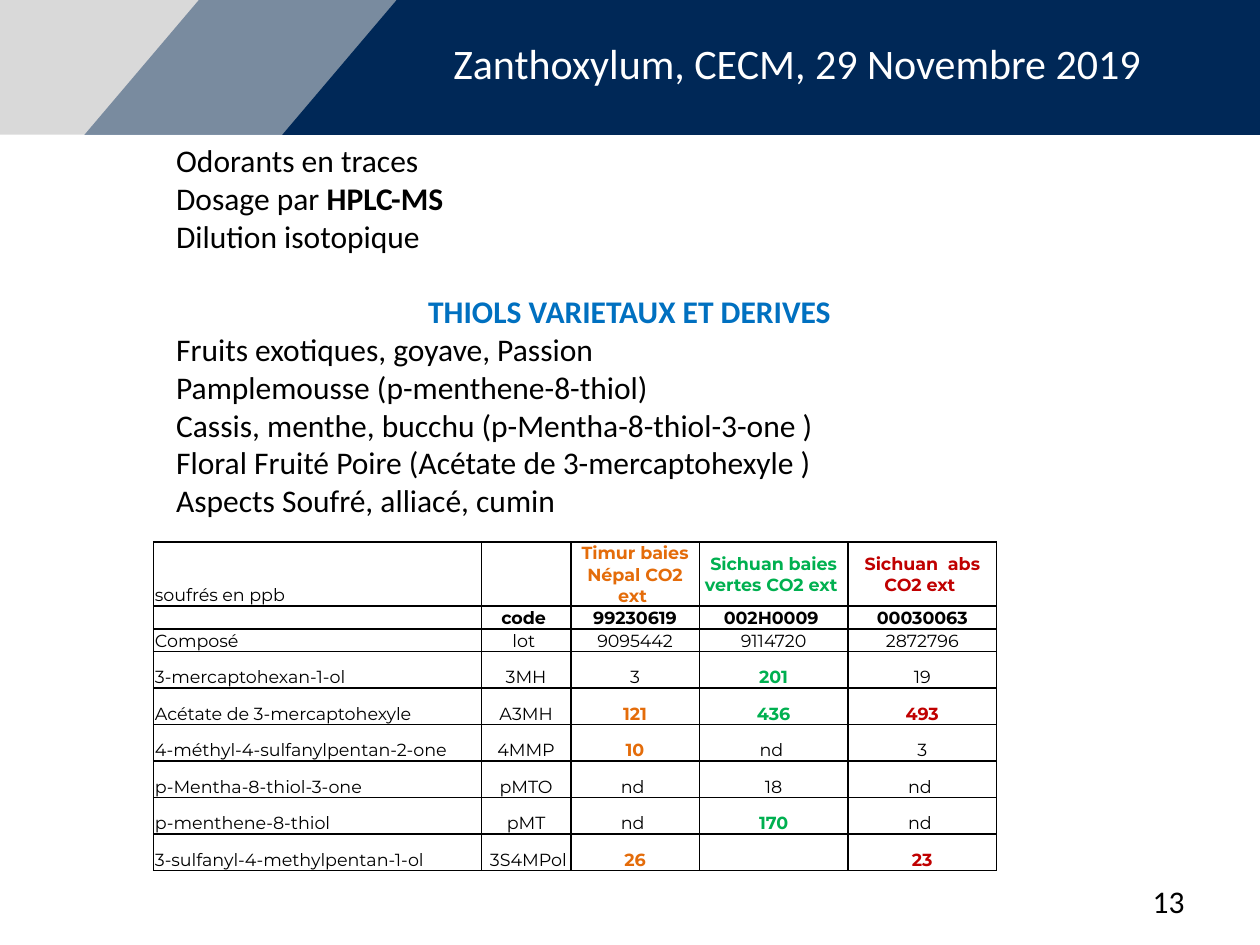
from lxml import etree
from pptx import Presentation
from pptx.dml.color import RGBColor
from pptx.enum import shapes, text
from pptx.oxml import ns
from pptx.util import Inches, Pt

NAVY, GREY, WHITE, BLACK, BLUE = "002857", "D9D9D9", "FFFFFF", "000000", "0070C0"
ORANGE, GREEN, RED = "E46C0A", "00B050", "C00000"
EXTRACT_COLOURS = {2: ORANGE, 3: GREEN, 4: RED}

# Each paragraph is a list of (text, bold) runs
METHOD = [
    [("Odorants en traces", False)],
    [("Dosage par ", False), ("HPLC-MS", True)],
    [("Dilution isotopique", False)],
]
HEADING = "THIOLS VARIETAUX ET DERIVES"
NOTES = [
    "Fruits exotiques, goyave, Passion",
    "Pamplemousse (p-menthene-8-thiol)",
    "Cassis, menthe, bucchu (p-Mentha-8-thiol-3-one )",
    "Floral Fruité Poire (Acétate de 3-mercaptohexyle )",
    "Aspects Soufré, alliacé, cumin",
]

DOSAGES = [
    ["soufrés en ppb", "", "Timur baies Népal CO2 ext ",
     "Sichuan baies vertes CO2 ext ", "Sichuan  abs CO2 ext "],
    ["", "code ", "99230619", "002H0009 ", "00030063"],
    ["Composé", "lot ", "9095442", "9114720", "2872796"],
    ["3-mercaptohexan-1-ol", "3MH", "3", "201", "19"],
    ["Acétate de 3-mercaptohexyle", "A3MH", "121", "436", "493"],
    ["4-méthyl-4-sulfanylpentan-2-one", "4MMP", "10", "nd ", "3"],
    ["p-Mentha-8-thiol-3-one", "pMTO", "nd ", "18", "nd "],
    ["p-menthene-8-thiol", "pMT", "nd ", " 170 ", "nd "],
    ["3-sulfanyl-4-methylpentan-1-ol", " 3S4MPol", "26", "", "23"],
]
COLUMN_WIDTHS = [2.6, 0.71, 1.02, 1.18, 1.18]
ROW_HEIGHTS = [0.46, 0.18, 0.18] + [0.29] * 6
CODE_ROW = 1
# Highlighted columns by row
HIGHLIGHTS = {0: (2, 3, 4), 3: (3,), 4: (2, 3, 4), 5: (2,), 7: (3,), 8: (2, 4)}


def colour(hex_value):
    return RGBColor.from_string(hex_value)


def add_band(slide, preset, left, width, fill, slant=None, alpha=None):
    band = slide.shapes.add_shape(preset, Inches(left), 0, Inches(width), Inches(1.07))
    band.shadow.inherit = False
    band.line.fill.background()
    band.fill.solid()
    band.fill.fore_color.rgb = colour(fill)
    if slant:
        band.adjustments[0] = slant
    if alpha:
        tint = band.fill._xPr.find(".//" + ns.qn("a:srgbClr"))
        etree.SubElement(tint, ns.qn("a:alpha"), val=str(alpha * 1000))


def add_run(paragraph, words, size, hex_value, bold=False, face="Calibri"):
    run = paragraph.add_run()
    run.text = words
    formats = {"size": Pt(size), "name": face, "bold": bold}
    for attribute, value in formats.items():
        setattr(run.font, attribute, value)
    run.font.color.rgb = colour(hex_value)


def add_text_frame(slide, left, top, width, height):
    box = slide.shapes.add_textbox(*(Inches(n) for n in (left, top, width, height)))
    box.text_frame.word_wrap = True
    return box.text_frame


def add_body(slide):
    frame = add_text_frame(slide, 1.3, 1.07, 7.17, 3.43)
    paragraph = frame.paragraphs[0]
    for index, runs in enumerate(METHOD):
        if index:
            paragraph = frame.add_paragraph()
        for words, bold in runs:
            add_run(paragraph, words, 18, BLACK, bold)

    # Indented heading, one line below the method
    heading = frame.add_paragraph()
    heading.space_before = Pt(21.6)
    heading._p.get_or_add_pPr().set("marL", str(Inches(2)))
    add_run(heading, HEADING, 18, BLUE, bold=True)

    for note in NOTES:
        add_run(frame.add_paragraph(), note, 18, BLACK)


def add_borders(cell):
    properties = cell._tc.get_or_add_tcPr()
    for side in ("lnL", "lnR", "lnT", "lnB"):
        line = etree.SubElement(properties, ns.qn("a:" + side), w=str(Pt(1)))
        fill = etree.SubElement(line, ns.qn("a:solidFill"))
        etree.SubElement(fill, ns.qn("a:srgbClr"), val=BLACK)


def fill_cell(cell, words, row, column):
    add_borders(cell)
    cell.fill.background()
    middle = row == 0 and column >= 2
    formats = {
        "margin_left": Inches(0.01), "margin_right": Inches(0.01),
        "margin_top": Inches(0.01), "margin_bottom": 0,
        "vertical_anchor": text.MSO_ANCHOR.MIDDLE if middle else text.MSO_ANCHOR.BOTTOM,
    }
    for attribute, value in formats.items():
        setattr(cell, attribute, value)

    paragraph = cell.text_frame.paragraphs[0]
    paragraph.alignment = text.PP_ALIGN.CENTER if column else text.PP_ALIGN.LEFT
    if words:
        highlighted = column in HIGHLIGHTS.get(row, ())
        hex_value = EXTRACT_COLOURS[column] if highlighted else BLACK
        add_run(paragraph, words, 10, hex_value, highlighted or row == CODE_ROW, "Montserrat")
    else:
        # Keeps an empty cell from stretching its row
        etree.SubElement(paragraph._p, ns.qn("a:endParaRPr"), sz="1000")


def add_dosage_table(slide):
    table = slide.shapes.add_table(
        len(DOSAGES), len(COLUMN_WIDTHS), Inches(1.22), Inches(4.3),
        Inches(sum(COLUMN_WIDTHS)), Inches(sum(ROW_HEIGHTS))).table
    table.first_row = table.horz_banding = False
    for column, width in zip(table.columns, COLUMN_WIDTHS):
        column.width = Inches(width)
    for row, height in zip(table.rows, ROW_HEIGHTS):
        row.height = Inches(height)
    for row, values in enumerate(DOSAGES):
        for column, words in enumerate(values):
            fill_cell(table.cell(row, column), words, row, column)


def main():
    deck = Presentation()
    deck.slide_width, deck.slide_height = Inches(10), Inches(7.5)
    slide = deck.slides.add_slide(deck.slide_layouts[6])

    # Header bands and title
    preset = shapes.MSO_SHAPE
    add_band(slide, preset.RECTANGLE, 0, 10, GREY)
    add_band(slide, preset.PARALLELOGRAM, 0.67, 10.32, NAVY, slant=0.849, alpha=44)
    add_band(slide, preset.PARALLELOGRAM, 2.24, 8.82, NAVY, slant=0.849)
    title = add_text_frame(slide, 3.5, 0.25, 6.8, 0.5)
    add_run(title.paragraphs[0], "Zanthoxylum, CECM, 29 Novembre 2019", 24, WHITE)

    # Page number
    page = add_text_frame(slide, 7.17, 6.95, 2.33, 0.4).paragraphs[0]
    page.alignment = text.PP_ALIGN.RIGHT
    add_run(page, "13", 18, BLACK)

    # Content
    add_body(slide)
    add_dosage_table(slide)
    deck.save("out.pptx")


if __name__ == "__main__":
    main()
